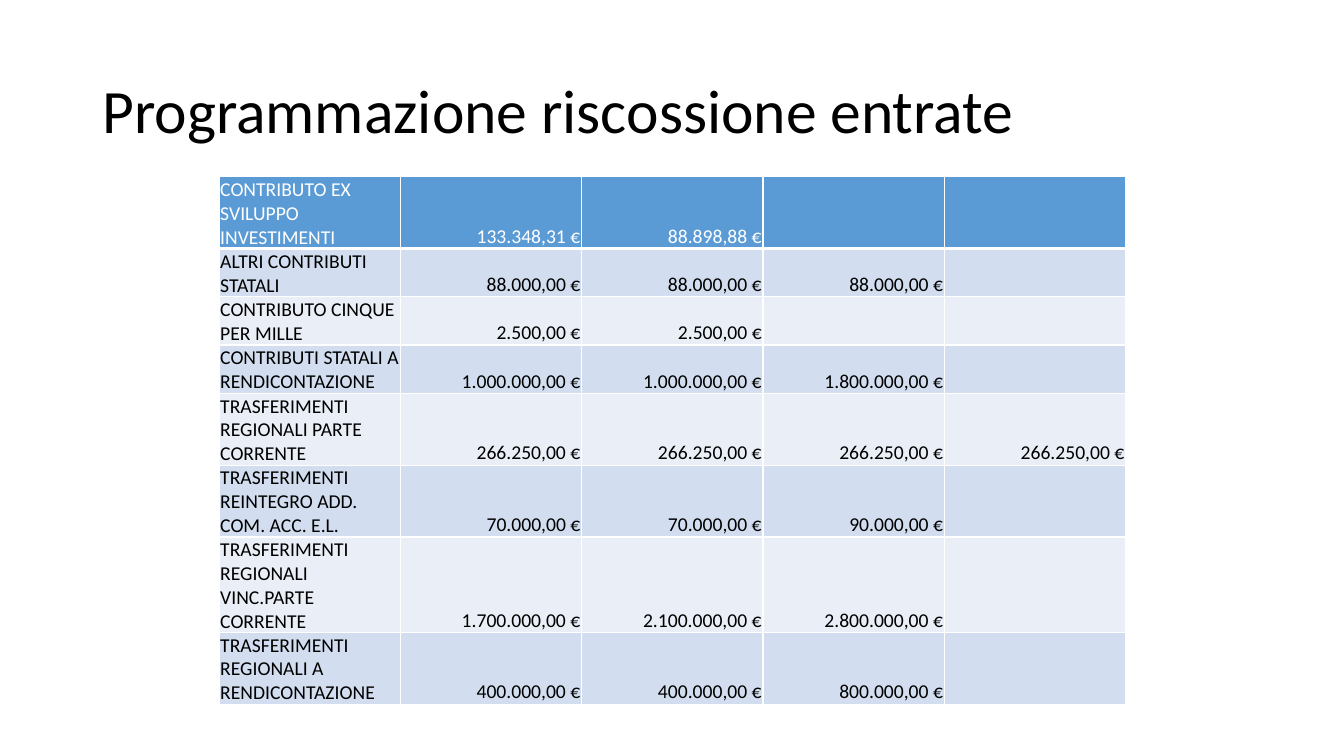
from dataclasses import dataclass

from lxml.etree import SubElement
from pptx import Presentation
from pptx.dml.color import RGBColor
from pptx.enum.text import MSO_ANCHOR, PP_ALIGN
from pptx.oxml.ns import qn
from pptx.slide import Slide
from pptx.table import _Cell
from pptx.text.text import _Paragraph
from pptx.util import Cm, Pt

FONT = "Calibri"
WHITE = "FFFFFF"
BLACK = "000000"
HEADER_FILL = "5B9BD5"
BAND_FILLS = ("EAEFF7", "D2DEEF")
COLUMNS = 5
COLUMN_WIDTH = 4.57
ROW_HEIGHT = 1.04


@dataclass(frozen=True)
class Income:
    name: str
    amounts: tuple[str, ...]


INCOMES = (
    Income("CONTRIBUTO EX SVILUPPO INVESTIMENTI", ("133.348,31 €", "88.898,88 €")),
    Income("ALTRI CONTRIBUTI STATALI", ("88.000,00 €",) * 3),
    Income("CONTRIBUTO CINQUE PER MILLE", ("2.500,00 €",) * 2),
    Income("CONTRIBUTI STATALI A RENDICONTAZIONE",
           ("1.000.000,00 €", "1.000.000,00 €", "1.800.000,00 €")),
    Income("TRASFERIMENTI REGIONALI PARTE CORRENTE", ("266.250,00 €",) * 4),
    Income("TRASFERIMENTI REINTEGRO ADD. COM. ACC. E.L.",
           ("70.000,00 €", "70.000,00 €", "90.000,00 €")),
    Income("TRASFERIMENTI REGIONALI VINC.PARTE CORRENTE",
           ("1.700.000,00 €", "2.100.000,00 €", "2.800.000,00 €")),
    Income("TRASFERIMENTI REGIONALI A RENDICONTAZIONE",
           ("400.000,00 €", "400.000,00 €", "800.000,00 €")),
)


def rgb(color: str) -> RGBColor:
    return RGBColor.from_string(color)


def format_text(p: _Paragraph, size: int, color: str) -> None:
    for r in p.runs:
        r.font.name = FONT
        r.font.size = Pt(size)
        r.font.bold = False
        r.font.color.rgb = rgb(color)


def draw_borders(cell: _Cell, top: int, bottom: int) -> None:
    tc_pr = cell._tc.get_or_add_tcPr()
    for side, width in (("L", 1), ("R", 1), ("T", top), ("B", bottom)):
        ln = SubElement(tc_pr, qn(f"a:ln{side}"), w=str(Pt(width)))
        fill = SubElement(ln, qn("a:solidFill"))
        SubElement(fill, qn("a:srgbClr"), val=WHITE)


def draw_cell(cell: _Cell, text: str, row: int, col: int) -> None:
    header = row == 0
    draw_borders(cell, top=3 if row == 1 else 1, bottom=3 if header else 1)
    cell.fill.solid()
    cell.fill.fore_color.rgb = rgb(HEADER_FILL if header else BAND_FILLS[row % 2])
    cell.margin_left = cell.margin_right = cell.margin_top = Cm(0.03)
    cell.margin_bottom = 0
    cell.vertical_anchor = MSO_ANCHOR.BOTTOM
    if text:
        cell.text_frame.text = text
        p = cell.text_frame.paragraphs[0]
        p.alignment = PP_ALIGN.RIGHT if col else PP_ALIGN.LEFT
        format_text(p, 14, WHITE if header else BLACK)


def draw_title(s: Slide, text: str) -> None:
    sp = s.shapes.add_textbox(Cm(2.33), Cm(1.01), Cm(29.21), Cm(3.68))
    tf = sp.text_frame
    tf.word_wrap = True
    tf.vertical_anchor = MSO_ANCHOR.MIDDLE
    tf.text = text
    p = tf.paragraphs[0]
    p.line_spacing = 0.9
    format_text(p, 44, BLACK)


def draw_table(s: Slide, incomes: tuple[Income, ...]) -> None:
    table = s.shapes.add_table(
        len(incomes), COLUMNS, Cm(5.52), Cm(4.45),
        Cm(COLUMNS * COLUMN_WIDTH), Cm(len(incomes) * ROW_HEIGHT),
    ).table
    for row, income in enumerate(incomes):
        texts = (income.name, *income.amounts)
        for col in range(COLUMNS):
            text = texts[col] if col < len(texts) else ""
            draw_cell(table.cell(row, col), text, row, col)


def main() -> None:
    prs = Presentation()
    prs.slide_width, prs.slide_height = Cm(33.87), Cm(19.05)
    s = prs.slides.add_slide(prs.slide_layouts[6])
    draw_title(s, "Programmazione riscossione entrate")
    draw_table(s, INCOMES)
    prs.save("out.pptx")


if __name__ == "__main__":
    main()
